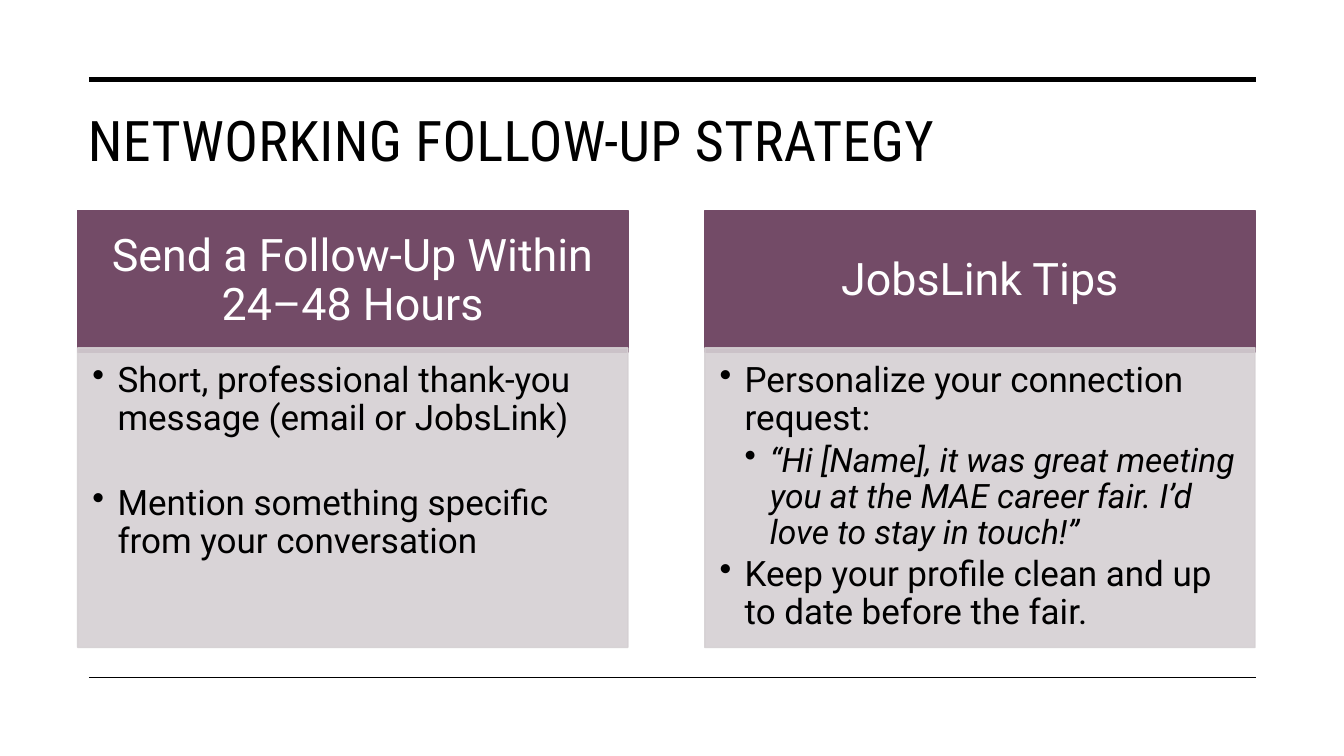
import pptx
import pptx.dml.color
import pptx.enum.shapes
import pptx.enum.text
import pptx.oxml
import pptx.oxml.ns
import pptx.util
from dataclasses import dataclass

Pt = pptx.util.Pt
Align = pptx.enum.text.PP_ALIGN
Anchor = pptx.enum.text.MSO_ANCHOR
qn = pptx.oxml.ns.qn


@dataclass(frozen=True)
class Theme:
    ink: str = "000000"
    paper: str = "FFFFFF"
    plum: str = "734B67"
    mist: str = "D5D0D3"
    font: str = "Roboto"
    title_font: str = "Roboto Condensed"
    title: float = 40
    head: float = 32
    body: float = 25
    quote: float = 24


def rgb(code):
    return pptx.dml.color.RGBColor.from_string(code)


def add_xml(parent, tag, **attrs):
    node = parent.makeelement(qn(tag), attrs)
    parent.append(node)
    return node


class Deck:
    def __init__(self, theme):
        self.theme = theme
        self.file = pptx.Presentation()
        self.file.slide_width, self.file.slide_height = Pt(960), Pt(540)
        self.slide = self.file.slides.add_slide(self.file.slide_layouts[5])

    def style(self, para, size, color, name=None):
        font = para.font
        font.size, font.name = Pt(size), name or self.theme.font
        font.color.rgb = rgb(color)

    def frame(self, shape, insets, anchor):
        frame = shape.text_frame
        frame.word_wrap = True
        frame.auto_size = pptx.enum.text.MSO_AUTO_SIZE.NONE
        frame.vertical_anchor = anchor
        (frame.margin_left, frame.margin_top,
         frame.margin_right, frame.margin_bottom) = map(Pt, insets)
        return frame

    def title(self, text, left, top, width, height):
        shape = self.slide.shapes.title
        shape.left, shape.top = Pt(left), Pt(top)
        shape.width, shape.height = Pt(width), Pt(height)
        frame = self.frame(shape, (7.2, 3.6, 7.2, 3.6), Anchor.TOP)
        frame.text = text
        para = frame.paragraphs[0]
        para.alignment = Align.LEFT
        self.style(para, self.theme.title, self.theme.ink, self.theme.title_font)
        para.runs[0].font._element.set("spc", "30")

    def rule(self, left, right, y, weight):
        line = self.slide.shapes.add_connector(
            pptx.enum.shapes.MSO_CONNECTOR.STRAIGHT,
            Pt(left), Pt(y), Pt(right), Pt(y))
        line.line.color.rgb = rgb(self.theme.ink)
        line.line.width = Pt(weight)
        add_xml(line._element.spPr, "a:effectLst")

    def box(self, left, top, width, height, color, alpha=100):
        shape = self.slide.shapes.add_shape(
            pptx.enum.shapes.MSO_SHAPE.RECTANGLE,
            Pt(left), Pt(top), Pt(width), Pt(height))
        shape.shadow.inherit = False
        shape.fill.solid()
        shape.fill.fore_color.rgb = rgb(color)
        shape.line.color.rgb = rgb(color)
        shape.line.width = Pt(1)
        if alpha < 100:
            for node in shape._element.spPr.iter(qn("a:srgbClr")):
                add_xml(node, "a:alpha", val=str(alpha * 1000))
        return shape

    def head(self, text, left, top, width, height):
        shape = self.box(left, top, width, height, self.theme.plum)
        frame = self.frame(shape, (18, 10, 18, 10), Anchor.MIDDLE)
        frame.text = text
        para = frame.paragraphs[0]
        para.alignment, para.line_spacing = Align.CENTER, 0.9
        self.style(para, self.theme.head, self.theme.paper)

    def bullets(self, items, left, top, width, height):
        """Draw a panel of (text, level, space after) items."""
        shape = self.box(left, top, width, height, self.theme.mist, 90)
        frame = self.frame(shape, (10.5, 10.5, 13.5, 15.5), Anchor.TOP)
        for i, (text, level, after) in enumerate(items):
            para = frame.paragraphs[0] if i == 0 else frame.add_paragraph()
            para.text, para.level = text, level
            para.alignment, para.line_spacing = Align.LEFT, 0.9
            para.space_after = Pt(after)
            quoted = level > 0
            size = self.theme.quote if quoted else self.theme.body
            self.style(para, size, self.theme.ink)
            para.font.italic = quoted
            props = para._p.get_or_add_pPr()
            props.set("marL", str(Pt(18 * (level + 1))))
            props.set("indent", str(Pt(-18)))
            mark = add_xml(props, "a:buChar", char="•")
            props.remove(mark)
            props.insert_element_before(mark, "a:tabLst", "a:defRPr", "a:extLst")


CARDS = [
    ("Send a Follow-Up Within 24–48 Hours", [
        ("Short, professional thank-you message (email or JobsLink)", 0, 33.5),
        ("Mention something specific from your conversation", 0, 3.5),
    ]),
    ("JobsLink Tips", [
        ("Personalize your connection request:", 0, 3.5),
        ("“Hi [Name], it was great meeting you at the MAE career fair. "
         "I’d love to stay in touch!”", 1, 3.5),
        ("Keep your profile clean and up to date before the fair.", 0, 3.5),
    ]),
]


def main():
    deck = Deck(Theme())
    deck.title("NETWORKING FOLLOW-UP STRATEGY", 55.5, 71.5, 842, 90.5)
    for y, weight in ((57, 3.5), (484, 1)):
        deck.rule(63.5, 897, y, weight)
    for i, (head, items) in enumerate(CARDS):
        left = 55.5 + 448 * i
        deck.head(head, left, 150.5, 393, 101)
        deck.bullets(items, left, 248.5, 393, 214)
    deck.file.save("out.pptx")


if __name__ == "__main__":
    main()
